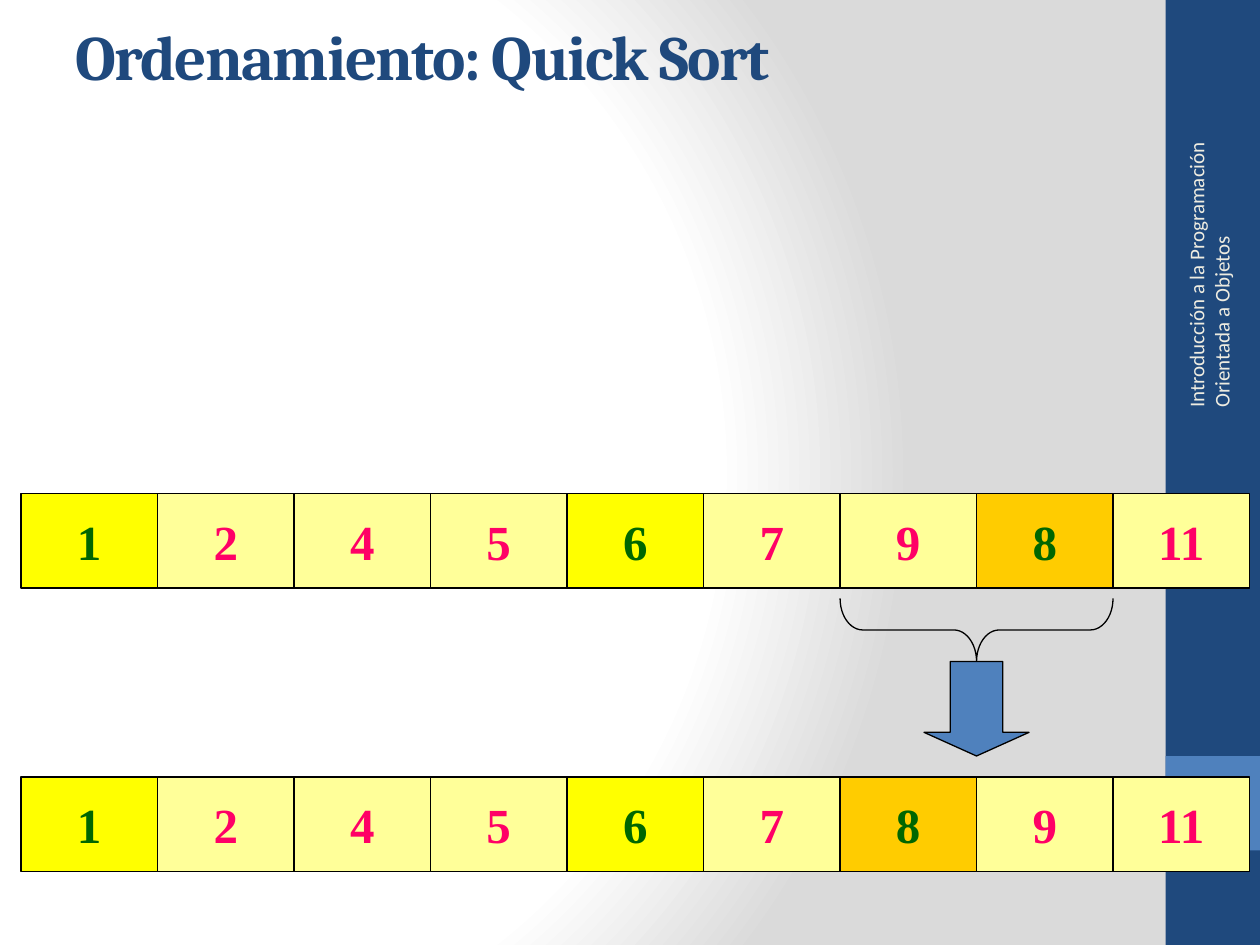
import pptx
import pptx.util
import pptx.oxml
import pptx.oxml.ns
from pptx.dml.color import RGBColor
from pptx.enum.shapes import MSO_SHAPE
from pptx.enum.text import MSO_ANCHOR, MSO_AUTO_SIZE, PP_ALIGN

PX = 7620  # EMU per px, 120 px to the inch

THEME = {
    "navy": "1F497D", "blue": "4F81BD", "cream": "EEECE1", "black": "000000",
    "glow": "FFFFFF", "edge": "DADADA", "line": 0.75,
    "title": {"name": "Cambria", "size": 36, "bold": True, "color": "1F497D"},
    "course": {"name": "Calibri", "size": 12, "color": "EEECE1"},
    "digit": {"name": "Times New Roman", "size": 28, "bold": True},
    # cell state: fill, digit colour
    "plain": ("FFFF99", "FF0066"),
    "placed": ("FFFF00", "006600"),
    "pivot": ("FFCC00", "006600"),
}


def box_emu(box):
    return [v * PX for v in box]


def write(tf, text, font, align=PP_ALIGN.LEFT, **frame):
    for name, value in frame.items():
        setattr(tf, name, value)
    p = tf.paragraphs[0]
    p.alignment = align
    r = p.add_run()
    r.text = text
    for name, value in font.items():
        if name == "color":
            r.font.color.rgb = RGBColor.from_string(value)
        else:
            setattr(r.font, name, pptx.util.Pt(value) if name == "size" else value)
    return r


def add_shape(slide, kind, box, fill=None, line=None):
    sp = slide.shapes.add_shape(kind, *box_emu(box))
    sp.shadow.inherit = False
    if fill:
        sp.fill.solid()
        sp.fill.fore_color.rgb = RGBColor.from_string(fill)
    else:
        sp.fill.background()
    if line:
        sp.line.color.rgb = RGBColor.from_string(line)
        sp.line.width = pptx.util.Pt(THEME["line"])
    else:
        sp.line.fill.background()
    return sp


def set_background(slide):
    stops = "".join(
        f'<a:gs pos="{pos}000"><a:srgbClr val="{THEME[color]}"/></a:gs>'
        for pos, color in ((0, "glow"), (75, "glow"), (100, "edge")))
    bg = pptx.oxml.parse_xml(
        f'<p:bg {pptx.oxml.ns.nsdecls("p", "a")}><p:bgPr><a:gradFill rotWithShape="1">'
        f'<a:gsLst>{stops}</a:gsLst><a:path path="circle">'
        '<a:fillToRect l="20000" t="50000" r="100000" b="50000"/></a:path>'
        '</a:gradFill><a:effectLst/></p:bgPr></p:bg>')
    slide.element.cSld.insert(0, bg)


def add_sidebar(slide, box, course):
    x, y, w, h = box
    add_shape(slide, MSO_SHAPE.RECTANGLE, box, THEME["navy"])
    add_shape(slide, MSO_SHAPE.RECTANGLE, (x, y + h - 180, w, 90), THEME["blue"])
    tb = slide.shapes.add_textbox(*box_emu((x - 119, y + 216, 320, 48)))
    tb.rotation = 270
    write(tb.text_frame, course, THEME["course"], word_wrap=True,
          vertical_anchor=MSO_ANCHOR.MIDDLE)


def add_title(slide, box, text):
    title = slide.shapes.title
    title.left, title.top, title.width, title.height = box_emu(box)
    r = write(title.text_frame, text, THEME["title"], word_wrap=True,
              vertical_anchor=MSO_ANCHOR.TOP, auto_size=MSO_AUTO_SIZE.NONE)
    r.font._element.set("spc", "-100")


def add_array(slide, box, values, pivot, placed=(1, 6)):
    x, y, w, h = box
    cell_w = w // len(values)
    for i, value in enumerate(values):
        state = "pivot" if value == pivot else "placed" if value in placed else "plain"
        fill, color = THEME[state]
        sp = add_shape(slide, MSO_SHAPE.RECTANGLE, (x + i * cell_w, y, cell_w, h),
                       fill, THEME["black"])
        write(sp.text_frame, str(value), {**THEME["digit"], "color": color},
              PP_ALIGN.CENTER, word_wrap=False, vertical_anchor=MSO_ANCHOR.MIDDLE)


def add_partition_mark(slide, box):
    """Brace under the compared cells, with an arrow down to the result."""
    x, y, w, h = box
    brace_h, arrow_w = 60, 100
    mid = x + w // 2
    brace = add_shape(slide, MSO_SHAPE.RIGHT_BRACE,
                      (mid - brace_h // 2, y + (brace_h - w) // 2, brace_h, w),
                      line=THEME["black"])
    brace.rotation = 90
    brace.adjustments[0] = 0.36
    add_shape(slide, MSO_SHAPE.DOWN_ARROW,
              (mid - arrow_w // 2, y + brace_h, arrow_w, h - brace_h),
              THEME["blue"], THEME["black"]).adjustments[1] = 0.25


def main():
    prs = pptx.Presentation()
    prs.slide_width, prs.slide_height = 1200 * PX, 900 * PX
    slide = prs.slides.add_slide(prs.slide_layouts[5])
    set_background(slide)
    add_sidebar(slide, (1110, 0, 90, 900),
                "Introducción a la Programación Orientada a Objetos")
    add_title(slide, (60, 11, 1078, 79), "Ordenamiento: Quick Sort")
    add_array(slide, (20, 470, 1170, 90), (1, 2, 4, 5, 6, 7, 9, 8, 11), pivot=8)
    add_partition_mark(slide, (800, 570, 260, 150))
    add_array(slide, (20, 740, 1170, 90), (1, 2, 4, 5, 6, 7, 8, 9, 11), pivot=8)
    prs.save("out.pptx")


if __name__ == "__main__":
    main()
